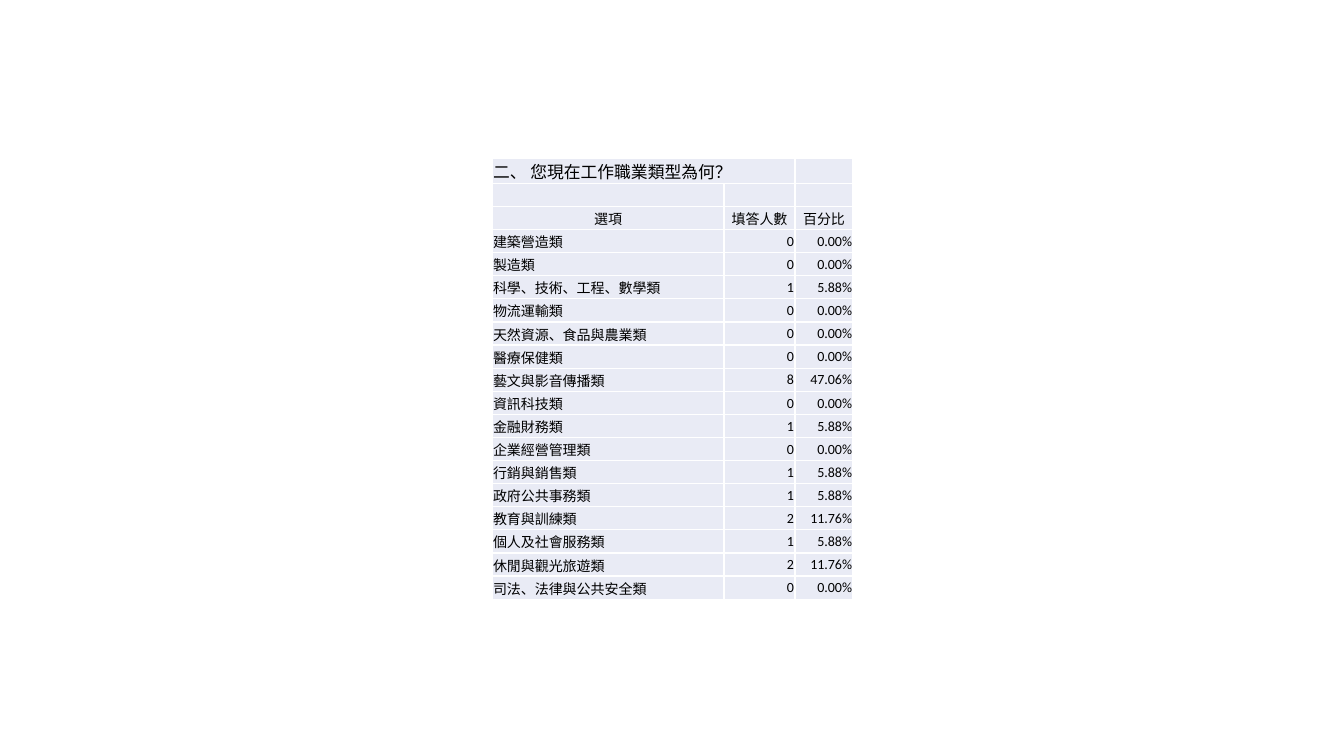
from lxml.etree import SubElement
from pptx import Presentation
from pptx.dml.color import RGBColor
from pptx.enum.text import MSO_ANCHOR as Anchor, PP_ALIGN as Align
from pptx.oxml import parse_xml
from pptx.oxml.ns import nsdecls, qn
from pptx.util import Pt

EMU_PER_PX = 12192000 / 1344
SLIDE_WIDTH, SLIDE_HEIGHT = 1344, 756
TABLE_LEFT, TABLE_TOP, TABLE_HEIGHT = 492, 158, 439
COLUMN_WIDTHS = (232, 71, 58)
COLORS = {"cell": "E9EBF5", "border": "FFFFFF", "text": "000000"}
FONT = "Calibri"
TITLE_SIZE, BODY_SIZE = 12, 10

TITLE = "二、 您現在工作職業類型為何？"
HEADERS = ("選項", "填答人數", "百分比")
ANSWERS = (
    ("建築營造類", 0),
    ("製造類", 0),
    ("科學、技術、工程、數學類", 1),
    ("物流運輸類", 0),
    ("天然資源、食品與農業類", 0),
    ("醫療保健類", 0),
    ("藝文與影音傳播類", 8),
    ("資訊科技類", 0),
    ("金融財務類", 1),
    ("企業經營管理類", 0),
    ("行銷與銷售類", 1),
    ("政府公共事務類", 1),
    ("教育與訓練類", 2),
    ("個人及社會服務類", 1),
    ("休閒與觀光旅遊類", 2),
    ("司法、法律與公共安全類", 0),
)


def px(length):
    return round(length * EMU_PER_PX)


def set_attributes(target, values):
    for name, value in values.items():
        setattr(target, name, value)


def add_borders(cell):
    properties = cell._tc.get_or_add_tcPr()
    for side in "LRTB":
        properties.append(parse_xml(
            f'<a:ln{side} {nsdecls("a")} w="12700"><a:solidFill>'
            f'<a:srgbClr val="{COLORS["border"]}"/></a:solidFill></a:ln{side}>'))


def format_cell(cell):
    add_borders(cell)
    cell.fill.solid()
    cell.fill.fore_color.rgb = RGBColor.from_string(COLORS["cell"])
    set_attributes(cell, {
        "vertical_anchor": Anchor.MIDDLE, "margin_left": px(1),
        "margin_right": px(1), "margin_top": px(1), "margin_bottom": 0})


def write_cell(cell, text, size, alignment):
    paragraph = cell.text_frame.paragraphs[0]
    paragraph.alignment = alignment
    if not text:
        # An empty cell needs a small text size to keep its row low.
        SubElement(paragraph._p, qn("a:endParaRPr"), sz=str(size * 100))
        return
    run = paragraph.add_run()
    run.text = text
    set_attributes(run.font, {"name": FONT, "size": Pt(size), "bold": False})
    run.font.color.rgb = RGBColor.from_string(COLORS["text"])


def survey_rows():
    """Return (texts, size, alignments) for each table row."""
    total = sum(count for _, count in ANSWERS)
    left = (Align.LEFT,) * 3
    rows = [((TITLE, "", ""), TITLE_SIZE, left),
            (("", "", ""), BODY_SIZE, left),
            (HEADERS, BODY_SIZE, (Align.CENTER,) * 3)]
    for label, count in ANSWERS:
        texts = (label, str(count), f"{count / total:.2%}")
        rows.append((texts, BODY_SIZE, (Align.LEFT, Align.RIGHT, Align.RIGHT)))
    return rows


def add_survey_table(slide):
    rows = survey_rows()
    frame = slide.shapes.add_table(
        len(rows), len(COLUMN_WIDTHS), px(TABLE_LEFT), px(TABLE_TOP),
        px(sum(COLUMN_WIDTHS)), px(TABLE_HEIGHT))
    table = frame.table
    set_attributes(table, {"first_row": False, "horz_banding": False})
    for column, width in zip(table.columns, COLUMN_WIDTHS):
        column.width = px(width)
    for row, (texts, size, alignments) in zip(table.rows, rows):
        row.height = px(TABLE_HEIGHT / len(rows))
        for cell, text, alignment in zip(row.cells, texts, alignments):
            format_cell(cell)
            write_cell(cell, text, size, alignment)
    table.cell(0, 0).merge(table.cell(0, 1))


def main():
    presentation = Presentation()
    set_attributes(presentation, {
        "slide_width": px(SLIDE_WIDTH), "slide_height": px(SLIDE_HEIGHT)})
    slide = presentation.slides.add_slide(presentation.slide_layouts[6])
    add_survey_table(slide)
    presentation.save("out.pptx")


if __name__ == "__main__":
    main()
